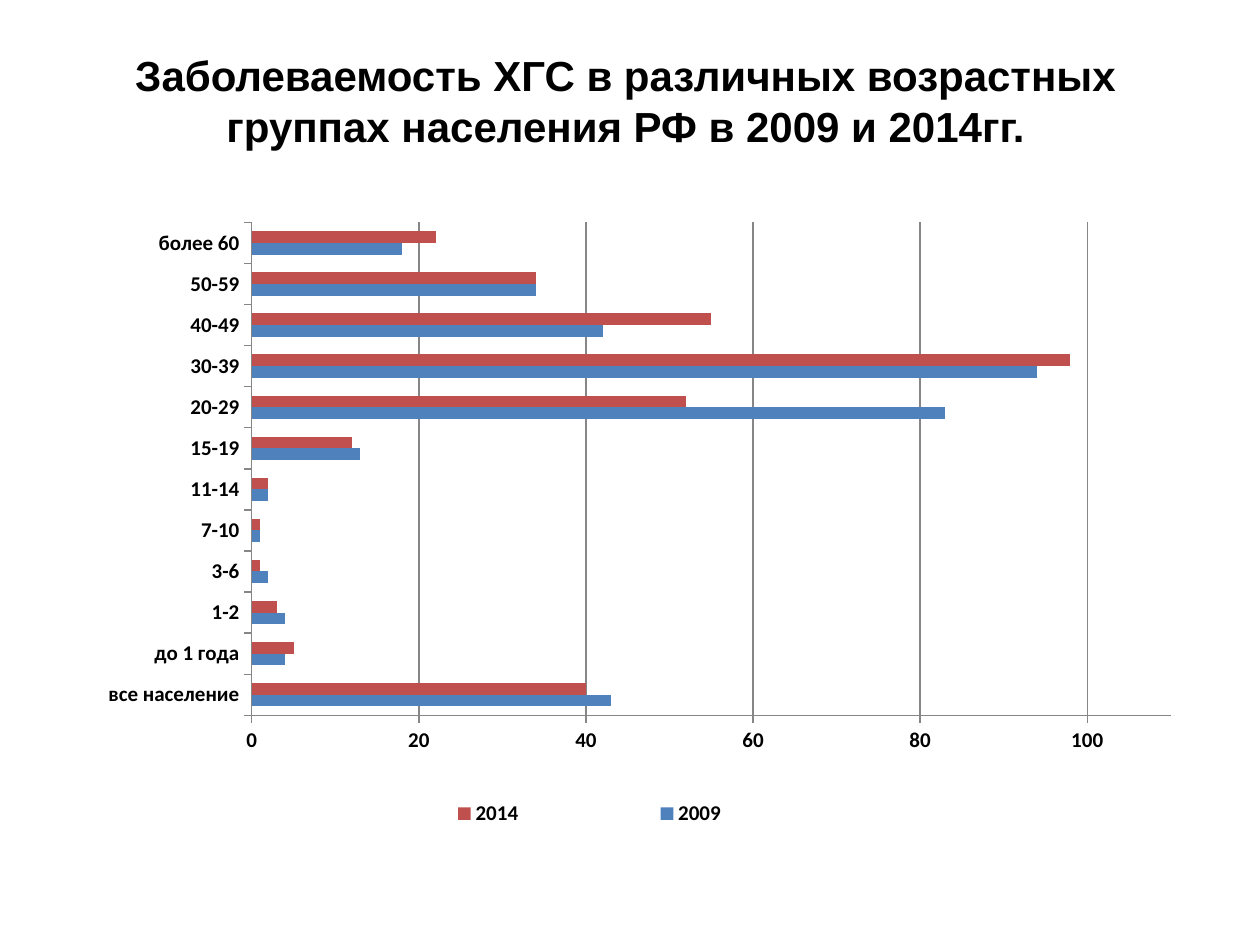
from lxml import etree
from pptx import Presentation
from pptx.chart.data import CategoryChartData
from pptx.dml.color import RGBColor
from pptx.enum.chart import XL_CHART_TYPE as ChartType, XL_LEGEND_POSITION as LegendPosition
from pptx.enum.chart import XL_TICK_MARK as TickMark
from pptx.enum.text import MSO_ANCHOR as Anchor, PP_ALIGN as Align
from pptx.oxml.ns import qn
from pptx.util import Inches, Pt

TITLE = "Заболеваемость ХГС в различных возрастных группах населения РФ в 2009 и 2014гг."
AGE_GROUPS = ["все население", "до 1 года", "1-2", "3-6", "7-10", "11-14",
              "15-19", "20-29", "30-39", "40-49", "50-59", "более 60"]
INCIDENCE = {
    "2009": ("4F81BD", [43, 4, 4, 2, 1, 2, 13, 83, 94, 42, 34, 18]),
    "2014": ("C0504D", [40, 5, 3, 1, 1, 2, 12, 52, 98, 55, 34, 22]),
}
BLACK, GRAY = "000000", "868686"


def color(hex_string):
    return RGBColor.from_string(hex_string)


def format_font(font, name, size, bold=True, hex_string=BLACK):
    font.name, font.size, font.bold = name, Pt(size), bold
    font.color.rgb = color(hex_string)


def format_line(line, hex_string=GRAY, width=0.75):
    line.color.rgb = color(hex_string)
    line.width = Pt(width)


def set_layout(element, x, y, w, h, inner=False):
    """Place a plot area or legend by fractions of the chart's size."""
    layout = element.find(qn("c:layout"))
    if layout is None:
        layout = etree.Element(qn("c:layout"))
        position = element.find(qn("c:legendPos"))
        if position is None:
            element.insert(0, layout)
        else:
            position.addnext(layout)
    for child in list(layout):
        layout.remove(child)
    manual = etree.SubElement(layout, qn("c:manualLayout"))
    settings = [("layoutTarget", "inner")] if inner else []
    settings += [("xMode", "edge"), ("yMode", "edge"), ("x", x), ("y", y), ("w", w), ("h", h)]
    for tag, value in settings:
        etree.SubElement(manual, qn(f"c:{tag}")).set("val", str(value))


def add_title(slide, text):
    title = slide.shapes.title
    title.left, title.top = Inches(0.28), Inches(0.36)
    title.width, title.height = Inches(9.37), Inches(0.87)
    frame = title.text_frame
    frame.text = text
    frame.word_wrap = True
    frame.vertical_anchor = Anchor.MIDDLE
    paragraph = frame.paragraphs[0]
    paragraph.alignment = Align.CENTER
    format_font(paragraph.runs[0].font, "Arial", 24)


def format_axes(chart):
    for axis in (chart.category_axis, chart.value_axis):
        axis.major_tick_mark = TickMark.OUTSIDE
        axis.minor_tick_mark = TickMark.NONE
        format_line(axis.format.line)
    chart.category_axis.has_major_gridlines = False
    value_axis = chart.value_axis
    value_axis.minimum_scale, value_axis.maximum_scale = 0, 110
    value_axis.major_unit = 20
    value_axis.has_major_gridlines = True
    format_line(value_axis.major_gridlines.format.line)


def add_incidence_chart(slide):
    data = CategoryChartData(number_format="General")
    data.categories = AGE_GROUPS
    for year, (_, values) in INCIDENCE.items():
        data.add_series(year, values)
    chart = slide.shapes.add_chart(ChartType.BAR_CLUSTERED, Inches(0.35), Inches(1.62),
                                   Inches(9.21), Inches(5.04), data).chart
    chart.has_title = False
    format_font(chart.font, "Calibri", 12)
    format_axes(chart)
    plot = chart.plots[0]
    plot.gap_width, plot.overlap = 150, 0
    plot.vary_by_categories = False
    for series, (fill_color, _) in zip(plot.series, INCIDENCE.values()):
        series.format.fill.solid()
        series.format.fill.fore_color.rgb = color(fill_color)
    chart.has_legend = True
    chart.legend.position = LegendPosition.BOTTOM
    chart.legend.include_in_layout = False
    plot_area = chart.element.find(".//" + qn("c:plotArea"))
    set_layout(plot_area, 0.179, 0.029, 0.792, 0.776, inner=True)
    set_layout(chart.element.find(".//" + qn("c:legend")), 0.24, 0.93, 0.46, 0.06)


def main():
    presentation = Presentation()
    presentation.slide_width, presentation.slide_height = Inches(10), Inches(7.5)
    slide = presentation.slides.add_slide(presentation.slide_layouts[5])
    add_incidence_chart(slide)
    add_title(slide, TITLE)
    presentation.save("out.pptx")


if __name__ == "__main__":
    main()
